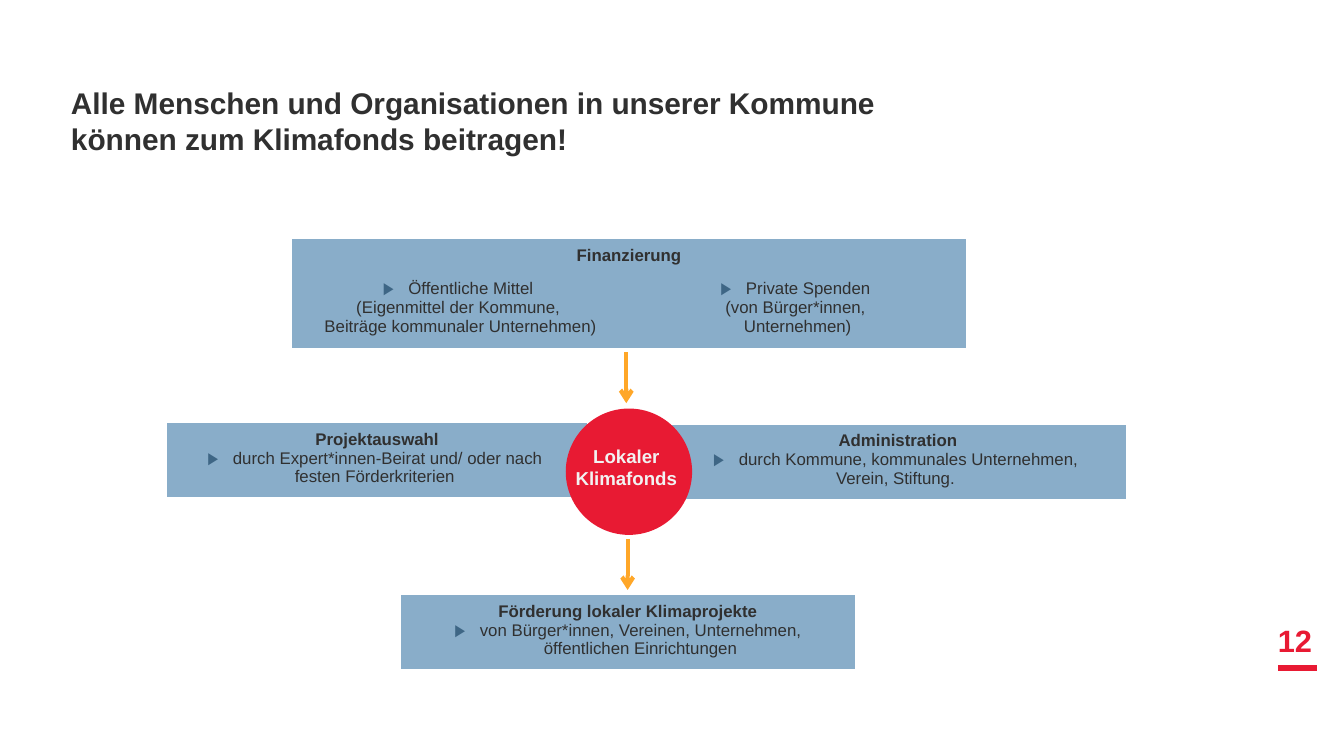
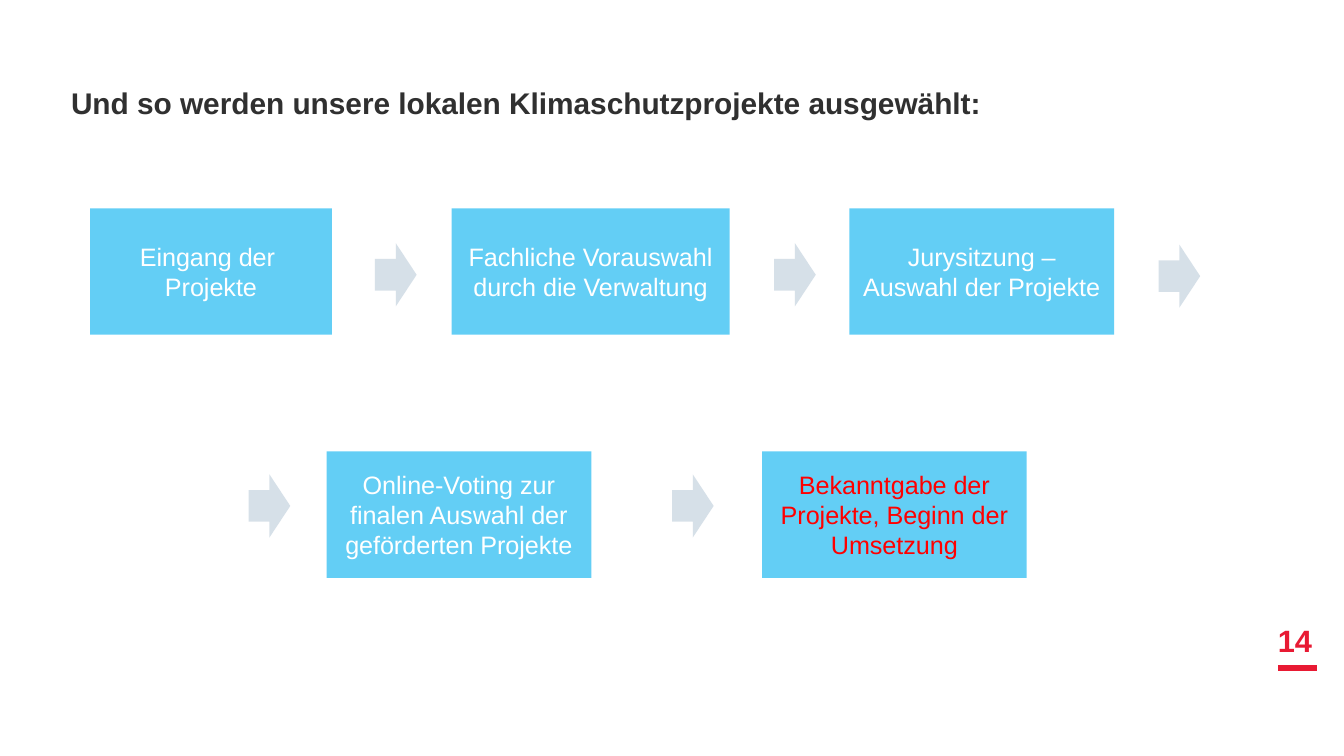
from lxml.etree import SubElement
from pptx import Presentation
from pptx.dml.color import RGBColor
from pptx.enum.shapes import MSO_CONNECTOR, MSO_SHAPE
from pptx.enum.text import MSO_ANCHOR, PP_ALIGN
from pptx.oxml.ns import qn
from pptx.util import Inches, Pt

FONT = "Arial"
DARK, RED, LIGHT = "303030", "E81A33", "F2F2F2"
PANEL, BULLET, ORANGE = "89ADC9", "3E6685", "FFA728"
STEP, CHEVRON, WHITE, ALERT = "00B0F0", "BDCDDB", "FFFFFF", "FF0000"
PLAIN_TABLE = "{2D5ABB26-0587-4C30-8999-92F81FD0307C}"
MARK = "▶"


def color(code):
    return RGBColor.from_string(code)


def box(*sizes):
    return [Inches(size) for size in sizes]


class Deck:
    def __init__(self):
        self.prs = Presentation()
        self.prs.slide_width = Inches(10)
        self.prs.slide_height = Inches(10) * 9 // 16
        self.slide = None

    def start(self, title, width, height, number):
        """Add a slide with its title, page number and red rule."""
        self.slide = self.prs.slides.add_slide(self.prs.slide_layouts[6])
        self.line(9.51, 4.97, 9.8, 4.97, RED, 3.5)
        self.text(9.3, 4.4, 0.67, 0.55, number, 16.5, RED,
                  align=PP_ALIGN.CENTER, anchor=MSO_ANCHOR.BOTTOM)
        self.text(0.43, 0.58, width, height, title, 16, DARK)

    def run(self, para, text, size, code, bold):
        run = para.add_run()
        run.text = text
        font = run.font
        font.name, font.size, font.bold = FONT, Pt(size), bold
        font.color.rgb = color(code)

    def fill(self, frame, text, size, code, bold, align, anchor):
        """Put one paragraph into a text frame; a newline breaks the line."""
        frame.word_wrap = True
        frame.vertical_anchor = anchor
        para = frame.paragraphs[0]
        para.alignment = align
        for i, part in enumerate(text.split("\n")):
            if i:
                para.add_line_break()
            self.run(para, part, size, code, bold)

    def text(self, x, y, w, h, text, size, code,
             align=PP_ALIGN.LEFT, anchor=MSO_ANCHOR.TOP, inset=0.1):
        frame = self.slide.shapes.add_textbox(*box(x, y, w, h)).text_frame
        frame.margin_left = frame.margin_right = Inches(inset)
        self.fill(frame, text, size, code, True, align, anchor)

    def shape(self, kind, x, y, w, h, code, alpha=None):
        shape = self.slide.shapes.add_shape(kind, *box(x, y, w, h))
        shape.shadow.inherit = False
        shape.line.fill.background()
        shape.fill.solid()
        shape.fill.fore_color.rgb = color(code)
        if alpha:
            tint = shape.fill._xPr.find(".//" + qn("a:srgbClr"))
            SubElement(tint, qn("a:alpha")).set("val", str(alpha * 1000))
        return shape

    def step(self, x, y, w, text, code=WHITE):
        shape = self.shape(MSO_SHAPE.RECTANGLE, x, y, w, 0.94, STEP, 61)
        self.fill(shape.text_frame, text, 13.5, code, False,
                  PP_ALIGN.CENTER, MSO_ANCHOR.MIDDLE)

    def arrow(self, x, y):
        self.shape(MSO_SHAPE.RIGHT_ARROW, x, y, 0.31, 0.47, CHEVRON, 61)

    def line(self, x1, y1, x2, y2, code, width, head=False):
        line = self.slide.shapes.add_connector(
            MSO_CONNECTOR.STRAIGHT, *box(x1, y1, x2, y2))
        line.line.color.rgb = color(code)
        line.line.width = Pt(width)
        if head:
            SubElement(line.line._ln, qn("a:tailEnd")).set("type", "arrow")
        SubElement(line._element.spPr, qn("a:effectLst"))

    def bullet(self, para):
        props = para._p.get_or_add_pPr()
        props.set("marL", str(Inches(0.19)))
        props.set("indent", str(-Inches(0.19)))
        tint = SubElement(props, qn("a:buClr"))
        SubElement(tint, qn("a:srgbClr")).set("val", BULLET)
        SubElement(props, qn("a:buFont")).set("typeface", FONT)
        SubElement(props, qn("a:buChar")).set("char", MARK)

    def cell(self, cell, head, lines):
        """Fill a cell: bold head, then lines; a leading mark makes a bullet."""
        cell.fill.solid()
        cell.fill.fore_color.rgb = color(PANEL)
        items = [(head, True)] if head else []
        items += [(line, False) for line in lines]
        frame = cell.text_frame
        for i, (text, bold) in enumerate(items):
            para = frame.add_paragraph() if i else frame.paragraphs[0]
            para.alignment = PP_ALIGN.CENTER
            if text.startswith(MARK):
                self.bullet(para)
            self.run(para, text.removeprefix(MARK), 9, DARK, bold)

    def table(self, x, y, w, heights, cols=1):
        table = self.slide.shapes.add_table(
            len(heights), cols, *box(x, y, w, sum(heights))).table
        table.first_row = table.horz_banding = False
        table._tbl.tblPr.find(qn("a:tableStyleId")).text = PLAIN_TABLE
        for row, height in zip(table.rows, heights):
            row.height = Inches(height)
        return table

    def panel(self, x, y, w, head, *lines):
        self.cell(self.table(x, y, w, [0.55]).cell(0, 0), head, lines)


def fund(deck):
    deck.start("Alle Menschen und Organisationen in unserer Kommune "
               "können zum Klimafonds beitragen!", 6.56, 2.91, "12")
    deck.panel(4.98, 3.16, 3.4, "Administration",
               "▶durch Kommune, kommunales Unternehmen, ",
               "Verein, Stiftung. ")
    deck.panel(1.24, 3.15, 3.13, "Projektauswahl",
               "▶durch Expert*innen-Beirat und/ oder nach ",
               "festen Förderkriterien ")
    deck.shape(MSO_SHAPE.OVAL, 4.21, 3.04, 0.94, 0.94, RED)
    deck.text(4.18, 3.26, 0.96, 0.44, "Lokaler Klimafonds", 10, LIGHT,
              align=PP_ALIGN.CENTER, inset=0.05)

    money = deck.table(2.17, 1.78, 5.02, [0.24, 0.56], cols=2)
    money.cell(0, 0).merge(money.cell(0, 1))
    deck.cell(money.cell(0, 0), "Finanzierung", [])
    deck.cell(money.cell(1, 0), None, [
        "▶Öffentliche Mittel ", "(Eigenmittel der Kommune, ",
        "Beiträge kommunaler Unternehmen)"])
    deck.cell(money.cell(1, 1), None, [
        "▶Private Spenden ", "(von Bürger*innen, ", "Unternehmen)"])

    deck.panel(2.98, 4.43, 3.38, "Förderung lokaler Klimaprojekte",
               "▶von Bürger*innen, Vereinen, Unternehmen, "
               "öffentlichen Einrichtungen")
    for x, y in [(4.66, 2.62), (4.67, 4.01)]:
        deck.line(x, y, x, y + 0.38, ORANGE, 2.25, head=True)


def choice(deck):
    deck.start("Und so werden unsere lokalen Klimaschutzprojekte ausgewählt:",
               7.01, 3.41, "14")
    top, low = 1.55, 3.36
    deck.step(0.67, top, 1.8, "Eingang der \nProjekte")
    deck.step(3.36, top, 2.07, "Fachliche Vorauswahl durch die Verwaltung")
    deck.step(6.32, top, 1.97, "Jurysitzung – Auswahl der Projekte ")
    deck.step(2.43, low, 1.97,
              "Online-Voting zur finalen Auswahl der geförderten Projekte")
    deck.step(5.67, low, 1.97,
              "Bekanntgabe der Projekte, Beginn der Umsetzung", ALERT)
    for x, y in [(2.79, 1.81), (5.76, 1.81), (8.62, 1.82),
                 (1.85, 3.53), (5, 3.53)]:
        deck.arrow(x, y)


def main():
    deck = Deck()
    fund(deck)
    choice(deck)
    deck.prs.save("out.pptx")


if __name__ == "__main__":
    main()
